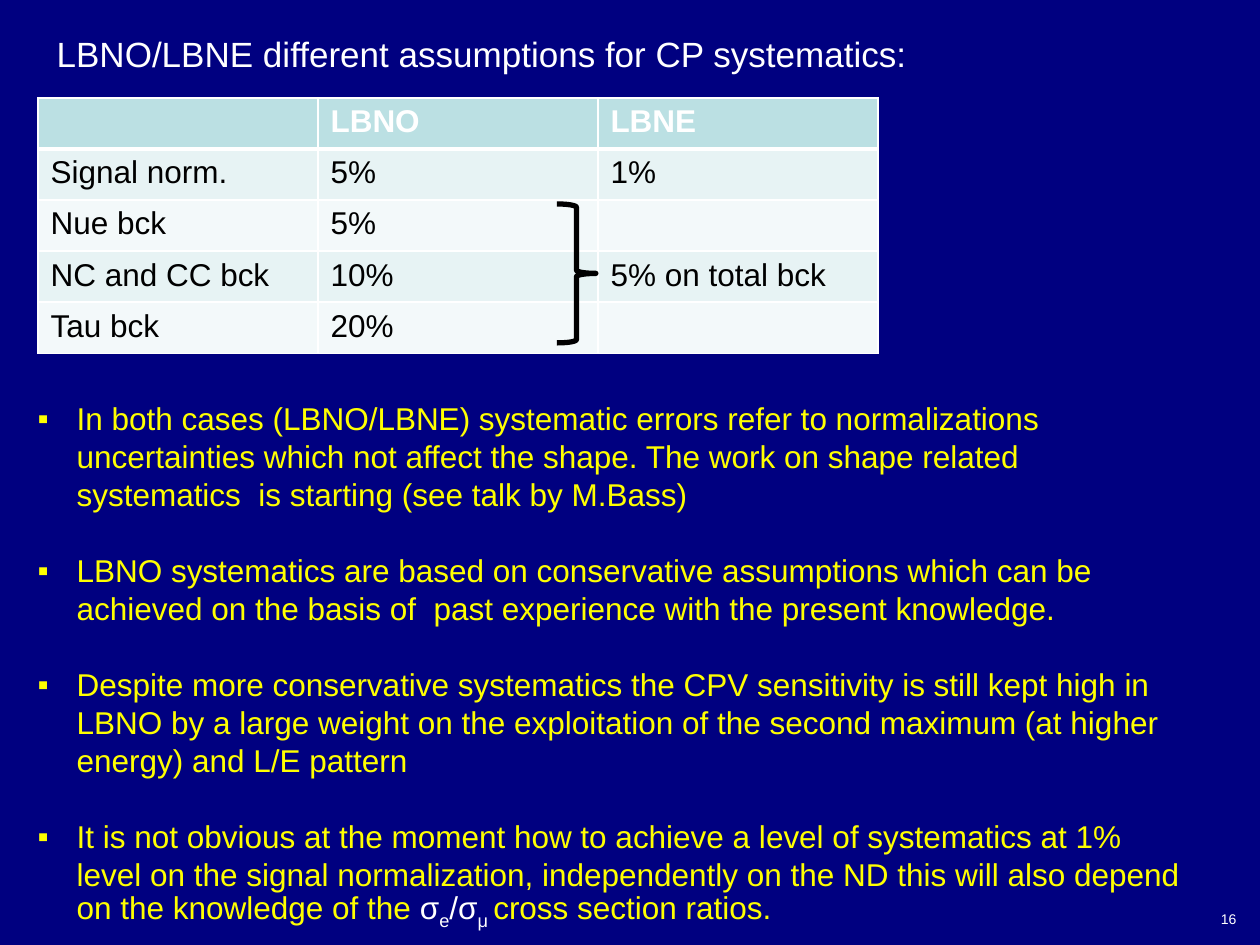
"""Build the slide comparing LBNO and LBNE systematics assumptions."""
from dataclasses import dataclass

from lxml.etree import SubElement
from pptx import Presentation
from pptx.dml.color import RGBColor
from pptx.enum.shapes import MSO_SHAPE as Shape
from pptx.enum.text import MSO_ANCHOR as Anchor, MSO_AUTO_SIZE as AutoSize, PP_ALIGN as Align
from pptx.oxml.ns import qn
from pptx.util import Emu, Pt


@dataclass(frozen=True)
class Theme:
    font: str = "Arial"
    navy: str = "000080"
    white: str = "FFFFFF"
    black: str = "000000"
    yellow: str = "FFFF00"
    header: str = "BBE0E3"
    bands: tuple = ("E7F3F4", "F3F9FA")
    title_size: int = 20
    text_size: int = 18
    number_size: int = 8
    line_pitch: float = 21.7


THEME = Theme()
EMU_PER_PX = 914400 / 126

TITLE = "LBNO/LBNE different assumptions for CP systematics:"
PAGE_NUMBER = "16"
ROWS = [
    ("", "LBNO", "LBNE"),
    ("Signal norm.", "5%", "1%"),
    ("Nue bck", "5%", ""),
    ("NC and CC bck", "10%", "5% on total bck"),
    ("Tau bck", "20%", ""),
]
NORMAL, SYMBOL, SUBSCRIPT = "normal", "symbol", "subscript"
BULLETS = [
    [("In both cases (LBNO/LBNE) systematic errors refer to normalizations uncertainties "
      "which not affect the shape. The work on shape related  systematics  is starting "
      "(see talk by M.Bass)", NORMAL)],
    [("LBNO systematics are based on conservative assumptions which can be achieved on the "
      "basis of  past experience with the present knowledge.", NORMAL)],
    [("Despite more conservative systematics the CPV sensitivity is still kept high in LBNO "
      "by a large weight on the exploitation of the second maximum (at higher energy) and "
      "L/E pattern", NORMAL)],
    [("It is not obvious at the moment how to achieve a level of systematics at 1% level on "
      "the signal normalization, independently on the ND this will also depend on the "
      "knowledge of the ", NORMAL),
     ("σ", SYMBOL), ("e", SUBSCRIPT), ("/σ", SYMBOL), ("μ ", SUBSCRIPT),
     ("cross section ratios.", NORMAL)],
]


def px(value):
    return Emu(round(value * EMU_PER_PX))


def rgb(color):
    return RGBColor.from_string(color)


def place(shape, left, top, width, height):
    shape.left, shape.top = px(left), px(top)
    shape.width, shape.height = px(width), px(height)


def add_span(para, text, size, color, bold=False):
    span = para.add_run()
    span.text = text
    span.font.name, span.font.size, span.font.bold = THEME.font, Pt(size), bold
    span.font.color.rgb = rgb(color)
    return span


def set_frame(shape, wrap, anchor):
    frame = shape.text_frame
    frame.auto_size, frame.word_wrap, frame.vertical_anchor = AutoSize.NONE, wrap, anchor
    return frame


def add_bullet(para):
    props = para._p.get_or_add_pPr()
    props.set("marL", str(px(39)))
    props.set("indent", str(-px(39)))
    SubElement(props, qn("a:buFont"), typeface=THEME.font)
    SubElement(props, qn("a:buChar"), char="▪")


def add_borders(cell, top, bottom):
    props = cell._tc.get_or_add_tcPr()
    for side, weight in (("L", 1), ("R", 1), ("T", top), ("B", bottom)):
        line = SubElement(props, qn(f"a:ln{side}"), w=str(Pt(weight)))
        fill = SubElement(line, qn("a:solidFill"))
        SubElement(fill, qn("a:srgbClr"), val=THEME.white)


def add_title(page):
    title = page.shapes.title
    place(title, 44, 26, 891, 55)
    para = set_frame(title, False, Anchor.TOP).paragraphs[0]
    para.alignment = Align.LEFT
    add_span(para, TITLE, THEME.title_size, THEME.white)


def add_assumptions(page):
    column, row_height = 280, 51
    frame = page.shapes.add_table(len(ROWS), len(ROWS[0]), px(38), px(98),
                                  px(column * len(ROWS[0])), px(row_height * len(ROWS)))
    table = frame.table
    for col in table.columns:
        col.width = px(column)
    for r, texts in enumerate(ROWS):
        heading = r == 0
        for c, text in enumerate(texts):
            cell = table.cell(r, c)
            add_borders(cell, 3 if r == 1 else 1, 3 if heading else 1)
            cell.fill.solid()
            cell.fill.fore_color.rgb = rgb(THEME.header if heading else THEME.bands[(r - 1) % 2])
            if text:
                add_span(cell.text_frame.paragraphs[0], text, THEME.text_size,
                         THEME.white if heading else THEME.black, heading)


def add_brace(page):
    brace = page.shapes.add_shape(Shape.RIGHT_BRACE, px(557), px(204), px(39), px(139))
    brace.shadow.inherit = False
    brace.fill.background()
    brace.line.color.rgb = rgb(THEME.black)
    brace.line.width = Pt(3)


def add_remarks(page):
    body = page.placeholders[1]
    place(body, 25, 393, 1181, 585)
    frame = set_frame(body, True, Anchor.TOP)
    for index, spans in enumerate(BULLETS):
        para = frame.add_paragraph() if index else frame.paragraphs[0]
        para.line_spacing = Pt(THEME.line_pitch)
        para.space_before = Pt(THEME.line_pitch if index else 0)
        para.space_after = Pt(0)
        add_bullet(para)
        for text, role in spans:
            color = THEME.yellow if role == NORMAL else THEME.white
            span = add_span(para, text, THEME.text_size, color)
            if role == SUBSCRIPT:
                span.font._element.set("baseline", "-25000")


def add_page_number(page):
    box = page.shapes.add_textbox(px(987), px(903), px(262), px(32))
    para = set_frame(box, True, Anchor.MIDDLE).paragraphs[0]
    para.alignment = Align.RIGHT
    add_span(para, PAGE_NUMBER, THEME.number_size, THEME.white)


def main():
    deck = Presentation()
    deck.slide_width, deck.slide_height = px(1260), px(945)
    page = deck.slides.add_slide(deck.slide_layouts[1])
    page.background.fill.solid()
    page.background.fill.fore_color.rgb = rgb(THEME.navy)
    for add_part in (add_page_number, add_assumptions, add_brace, add_title, add_remarks):
        add_part(page)
    deck.save("out.pptx")


if __name__ == "__main__":
    main()
